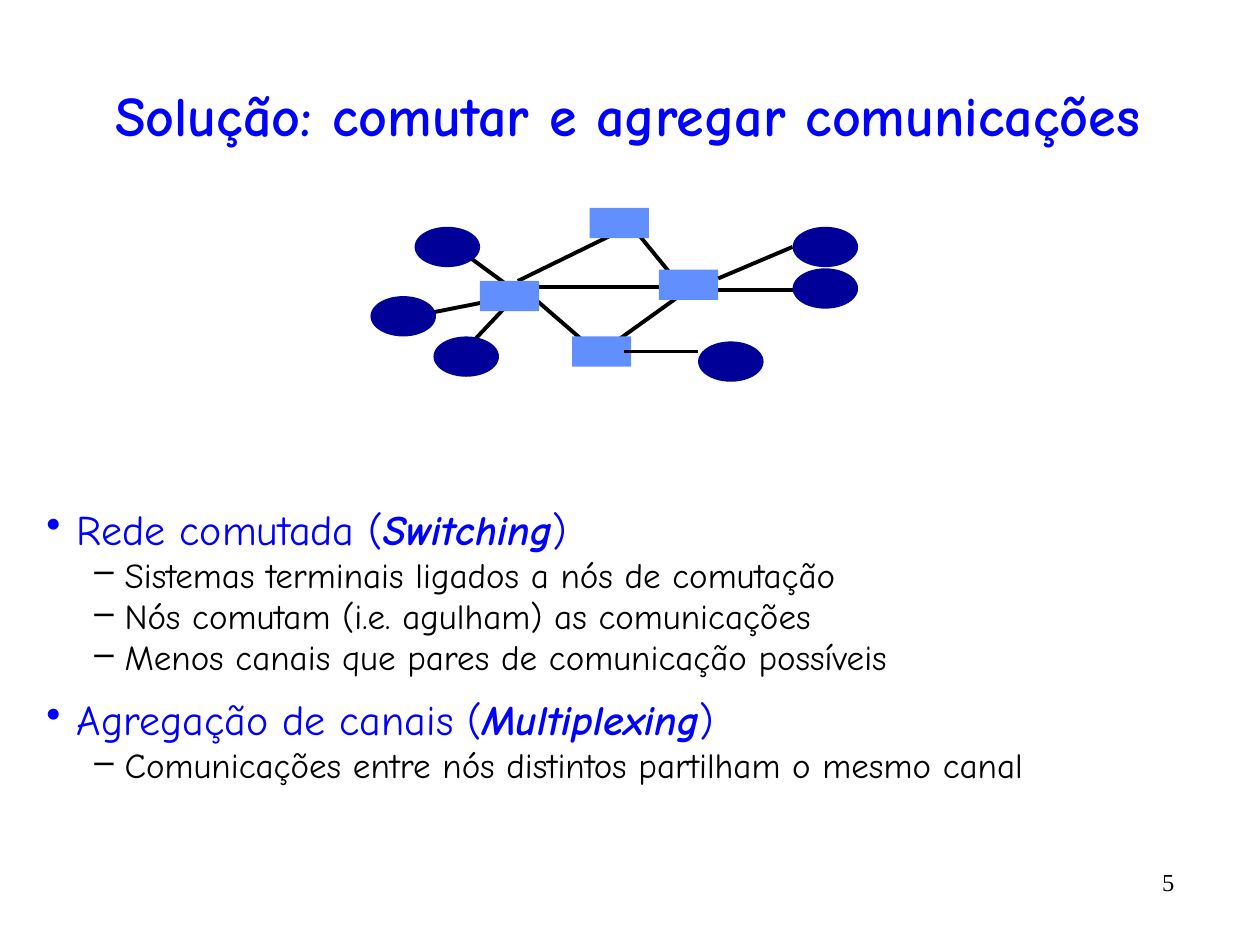
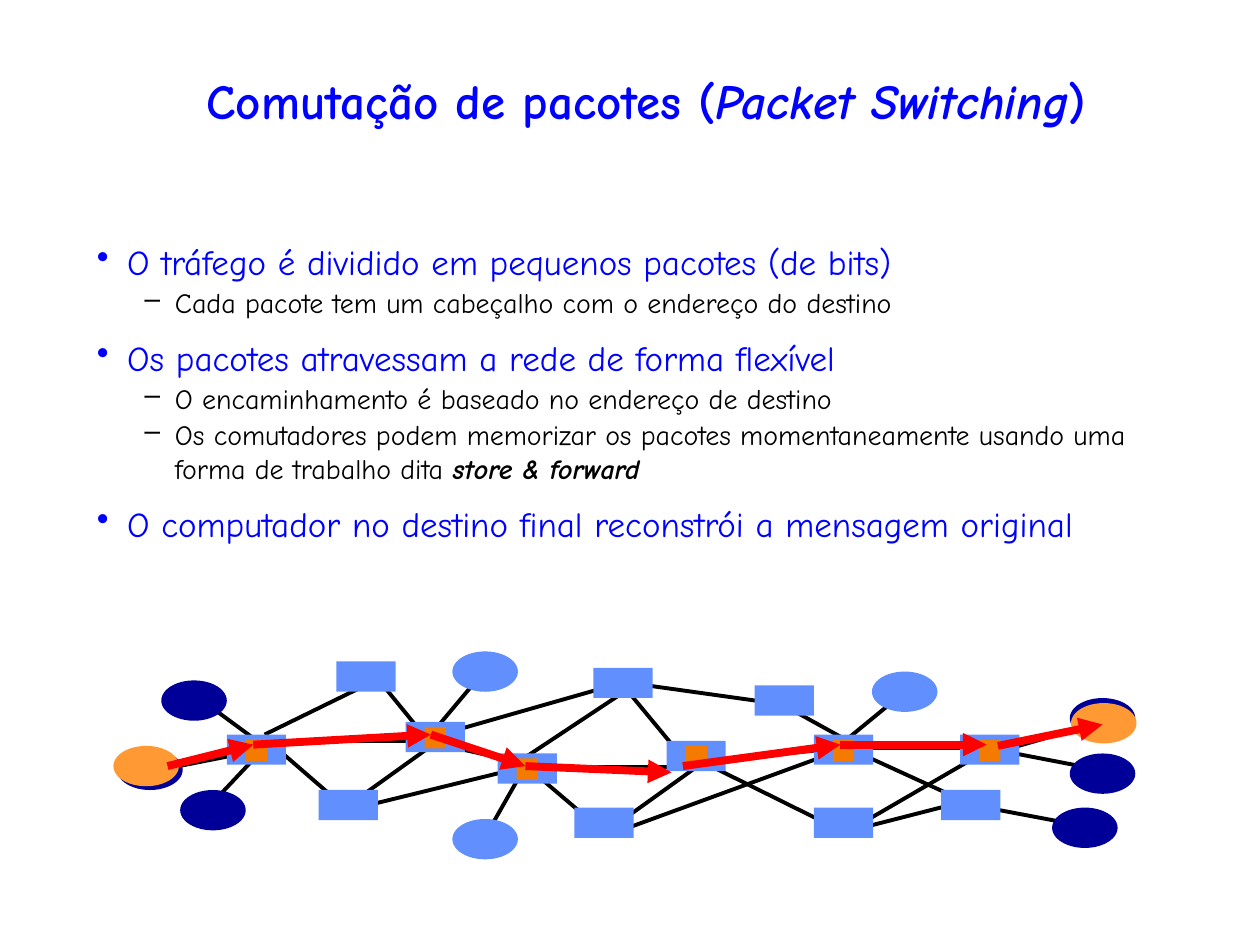
from itertools import pairwise

from lxml.etree import SubElement
from pptx import Presentation
from pptx.dml.color import RGBColor
from pptx.enum.shapes import MSO_CONNECTOR, MSO_SHAPE
from pptx.enum.text import MSO_ANCHOR, MSO_AUTO_SIZE, PP_ALIGN
from pptx.oxml.ns import qn
from pptx.util import Inches, Pt

BLUE = RGBColor(0x00, 0x00, 0xFF)
NAVY = RGBColor(0x00, 0x00, 0x99)
SKY = RGBColor(0x61, 0x8F, 0xFD)
BLACK = RGBColor(0x00, 0x00, 0x00)
RED = RGBColor(0xFF, 0x00, 0x00)
AMBER = RGBColor(0xF4, 0x7A, 0x00)
PEACH = RGBColor(0xFF, 0x99, 0x33)

FONT = "Comic Neue"
COLS = 100
NODE = (4.7, 2.4)
HOST = (5.2, 3.2)
PACK = (1.7, 1.7)


def write(par, text, size=20, color=BLACK, font=FONT, bold=False, strong=False):
    """Write text in a paragraph; parts between asterisks are italic."""
    for num, part in enumerate(text.split("*")):
        if part:
            run = par.add_run()
            run.text = part
            form = run.font
            form.name, form.size = font, Pt(size)
            form.color.rgb = color
            form.italic = num % 2 == 1
            form.bold = bold or (strong and form.italic)


class Deck:
    """Hold the style, the grid and the current slide."""

    def __init__(self):
        self.prs = Presentation()
        self.prs.slide_width, self.prs.slide_height = Inches(10), Inches(7.5)
        self.unit = self.prs.slide_width / COLS

    def grid(self, *cells):
        """Turn grid cells into lengths."""
        return [round(cell * self.unit) for cell in cells]

    def page(self, title, area, size):
        """Start a slide and format its title."""
        self.slide = self.prs.slides.add_slide(self.prs.slide_layouts[5])
        head = self.slide.shapes.title
        head.left, head.top, head.width, head.height = self.grid(*area)
        frame = head.text_frame
        frame.auto_size = MSO_AUTO_SIZE.NONE
        frame.vertical_anchor = MSO_ANCHOR.MIDDLE
        par = frame.paragraphs[0]
        par.alignment = PP_ALIGN.CENTER
        write(par, title, size=size, color=BLUE, bold=True)

    def box(self, area):
        """Add a wrapping text box and return its frame."""
        frame = self.slide.shapes.add_textbox(*self.grid(*area)).text_frame
        frame.word_wrap = True
        return frame

    def label(self, text, area, **form):
        """Add a line of text set to the right."""
        par = self.box(area).paragraphs[0]
        par.alignment = PP_ALIGN.RIGHT
        write(par, text, **form)

    def bullets(self, items, area, sizes, lead=1.0):
        """Add a list of (level, text) items."""
        frame = self.box(area)
        for num, (level, text) in enumerate(items):
            par = frame.add_paragraph() if num else frame.paragraphs[0]
            size = sizes[level]
            par.level = level
            par.line_spacing = lead
            par.space_before = Pt(size * (0.5, 0.1)[level])
            props = par._p.get_or_add_pPr()
            props.set("marL", str(Inches((0.24, 0.62)[level])))
            props.set("indent", str(Inches(-0.24)))
            SubElement(props, qn("a:buChar")).set("char", "•–"[level])
            write(par, text, size=size, color=(BLUE, BLACK)[level], strong=True)

    def mark(self, kind, spots, size, color):
        """Add plain shapes of one size and colour at the spots."""
        for spot in spots:
            shape = self.slide.shapes.add_shape(kind, *self.grid(*spot, *size))
            shape.shadow.inherit = False
            shape.fill.solid()
            shape.fill.fore_color.rgb = color
            shape.line.fill.background()

    def nodes(self, spots):
        """Add switching nodes."""
        self.mark(MSO_SHAPE.RECTANGLE, spots, NODE, SKY)

    def hosts(self, spots, color=NAVY):
        """Add end systems."""
        self.mark(MSO_SHAPE.OVAL, spots, HOST, color)

    def packets(self, spots):
        """Add one packet inside each node at the spots."""
        inner = [(x + 1.5, y + 0.4) for x, y in spots]
        self.mark(MSO_SHAPE.RECTANGLE, inner, PACK, AMBER)

    def link(self, ends, color=BLACK, width=2.25, arrow=False):
        """Join two points with a line or an arrow."""
        line = self.slide.shapes.add_connector(MSO_CONNECTOR.STRAIGHT, *self.grid(*ends))
        line.line.color.rgb = color
        line.line.width = Pt(width)
        if arrow:
            SubElement(line.line._get_or_add_ln(), qn("a:tailEnd")).set("type", "triangle")
        SubElement(line._element.spPr, qn("a:effectLst"))

    def links(self, rows):
        """Add plain lines."""
        for ends in rows:
            self.link(ends)

    def trail(self, *stops):
        """Add red arrows from stop to stop."""
        for start, end in pairwise(stops):
            self.link((*start, *end), color=RED, width=4.5, arrow=True)


def switch(deck):
    """Build the slide on switching and multiplexing."""
    deck.page("Solução: comutar e agregar comunicações", (3.3, 4.2, 93.1, 9.7), 32)
    deck.label("5", (84.2, 68.3, 10, 4.2), size=14, font="Times New Roman")
    deck.bullets([
        (0, "Rede comutada (*Switching*)"),
        (1, "Sistemas terminais ligados a nós de comutação"),
        (1, "Nós comutam (i.e. agulham) as comunicações"),
        (1, "Menos canais que pares de comunicação possíveis"),
        (0, "Agregação de canais (*Multiplexing*)"),
        (1, "Comunicações entre nós distintos partilham o mesmo canal"),
    ], (2.7, 39.9, 94.2, 28.4), (24, 20), lead=0.9)
    west, south = (41.5, 22.9), (47.5, 28.1)
    north = (50.1, 17.9)
    deck.links([
        (62.9, 23, 57, 23), (37.1, 20.3, 40.5, 22.8),
        (*west, 36.6, 28.1), (*west, *south),
        (53.8, 22.8, 42.2, 22.8), (54.6, 23, *south),
        (41.1, 22.3, *north), (41.4, 23.4, 32.3, 25.2), (*north, 54.1, 22.8),
    ])
    deck.nodes([(38.1, 22.3), (45.4, 26.7), (52.3, 21.4), (46.8, 16.5)])
    deck.hosts([(55.4, 27.1), (62.9, 18), (62.9, 21.3),
                (34.4, 26.7), (29.4, 23.5), (32.9, 18)])
    deck.links([(55.4, 27.9, 49.5, 27.9), (62.9, 19.6, 57, 22.1)])


def packet(deck):
    """Build the slide on packet switching."""
    deck.page("Comutação de pacotes (*Packet Switching*)", (6.7, 2.5, 89.2, 10.8), 28)
    deck.bullets([
        (0, "O tráfego é dividido em pequenos pacotes (de bits)"),
        (1, "Cada pacote tem um cabeçalho com o endereço do destino"),
        (0, "Os pacotes atravessam a rede de forma flexível"),
        (1, "O encaminhamento é baseado no endereço de destino"),
        (1, "Os comutadores podem memorizar os pacotes momentaneamente usando uma "
            "forma de trabalho dita *store & forward*"),
        (0, "O computador no destino final reconstrói a mensagem original"),
    ], (6.7, 18.6, 84.2, 26.7), (20, 16))
    first, second = (21.4, 58.9), (34.5, 59)
    third, fifth = (41.7, 60.8), (66.7, 59.1)
    low, mid, top = (27.4, 64.1), (48, 66.1), (30, 53.9)
    deck.links([
        (38.4, 53.3, 34.2, 58.3), (*third, 38.4, 66.6), (71.7, 55, *fifth),
        (77.2, 63.9, 85.7, 65.5), (79.8, 59.5, 86.7, 57.5), (79, 59.5, 87.8, 61.2),
        (42, 61, *mid), (54.3, 60.9, 42.7, 60.9), (55.1, 61, *mid),
        (48.2, 66.3, 67.1, 59.4), (67.6, 59.4, 78.8, 59.4), (67.6, 59.5, 77, 63.8),
        (67.6, 65.8, 78.8, 59.3), (68.4, 65.7, 76.2, 63.7), (50, 54, 33.9, 58.6),
        (17, 56.3, 20.4, 58.8), (*first, 16.5, 64.1), (61.7, 55.7, 68.2, 59.3),
        (48.5, 54, 62.8, 56), (*first, *low), (33.7, 58.8, 22.1, 58.8),
        (*second, *low), (*second, 41.3, 60.5), (27.6, 64.3, 43.1, 60.5),
        (21, 58.3, *top), (41.4, 60.3, 49.4, 55), (21.3, 59.4, 12.2, 61.2),
        (49.7, 54.7, 54.5, 60.5), (54.4, 59.8, 67.1, 66.1), (*top, 34, 58.8),
        (56.2, 60.4, 67.4, 59.3),
    ])
    route = [(18, 58.3), (32.2, 57.3), (39.5, 59.8), (52.9, 58.8),
             (64.6, 58.3), (76.2, 58.3)]
    deck.nodes(route + [(25.3, 62.7), (64.6, 64.1), (47.1, 53), (45.6, 64.1),
                        (59.9, 54.4), (26.7, 52.5), (74.7, 62.7)])
    deck.hosts([(83.5, 64.1), (84.9, 59.8), (84.9, 55.4),
                (14.3, 62.7), (9.3, 59.5), (12.8, 54)])
    deck.packets(route)
    deck.hosts([(35.9, 51.7), (35.9, 65), (69.2, 53.3)], SKY)
    deck.hosts([(85, 55.8), (9, 59.2)], PEACH)
    deck.trail((13.3, 60.8), (20.1, 59.1), (34.2, 58.3), third, (53.3, 61.3))
    deck.trail((54.2, 60.8), fifth, (78.3, 59.1))
    deck.trail((79.2, 59.2), (87.5, 57.5))


def main():
    """Build and save the slides."""
    deck = Deck()
    switch(deck)
    packet(deck)
    deck.prs.save("out.pptx")


if __name__ == "__main__":
    main()
